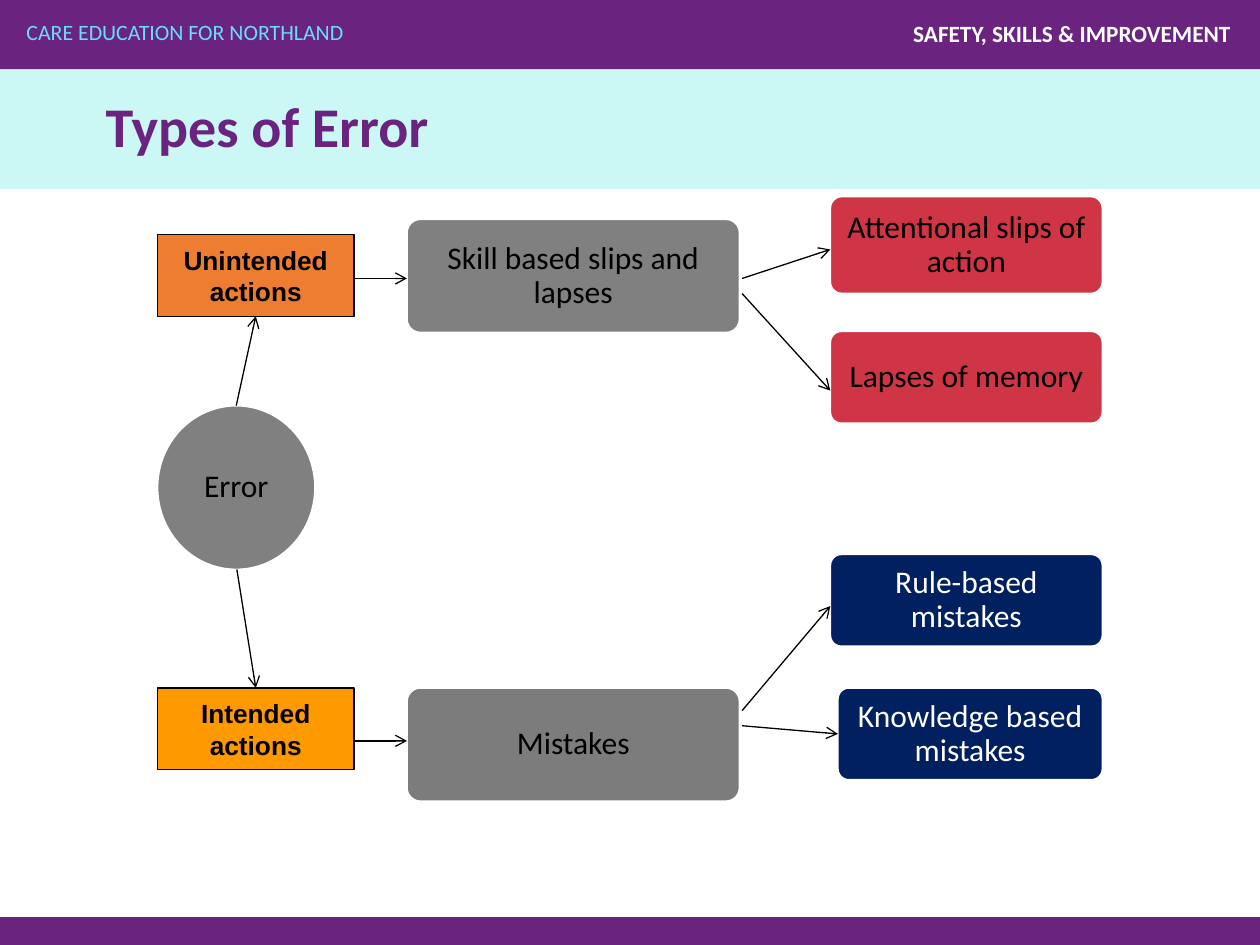
from dataclasses import dataclass

from lxml.etree import SubElement
from pptx import Presentation
from pptx.dml.color import RGBColor
from pptx.enum.shapes import MSO_CONNECTOR, MSO_SHAPE
from pptx.enum.text import MSO_ANCHOR, PP_ALIGN
from pptx.oxml.ns import qn
from pptx.util import Inches, Pt


@dataclass(frozen=True)
class Theme:
    purple: str = "6A2480"
    mint: str = "CBF7F4"
    sky: str = "66DCFF"
    gray: str = "808080"
    slate: str = "7C7C7C"
    red: str = "CF3544"
    navy: str = "002060"
    orange: str = "ED7D31"
    amber: str = "FF9900"
    black: str = "000000"
    white: str = "FFFFFF"
    body: str = "Calibri"
    label: str = "Arial"
    title: float = 32
    node: float = 18
    tag: float = 15
    brand: float = 12.5
    topic: float = 13.3


T = Theme()


def color(code):
    return RGBColor.from_string(code)


def write(shape, lines, size, ink, font=T.body, bold=False,
          align=PP_ALIGN.LEFT, space=None, inset=None, wrap=True,
          anchor=MSO_ANCHOR.MIDDLE):
    frame = shape.text_frame
    frame.word_wrap = wrap
    frame.vertical_anchor = anchor
    if inset is not None:
        frame.margin_left = frame.margin_right = Inches(inset)
        frame.margin_top = frame.margin_bottom = Inches(inset)
    for i, line in enumerate(lines):
        para = frame.add_paragraph() if i else frame.paragraphs[0]
        para.alignment = align
        if space:
            para.line_spacing = space
        run = para.add_run()
        run.text = line
        run.font.size = Pt(size)
        run.font.name = font
        run.font.bold = bold
        run.font.color.rgb = color(ink)


def draw(slide, kind, box, fill, line=None, width=1):
    shape = slide.shapes.add_shape(kind, *map(Inches, box))
    shape.shadow.inherit = False
    shape.fill.solid()
    shape.fill.fore_color.rgb = color(fill)
    if line:
        shape.line.color.rgb = color(line)
        shape.line.width = Pt(width)
    else:
        shape.line.fill.background()
    return shape


def band(slide, top, height, fill):
    draw(slide, MSO_SHAPE.RECTANGLE, (0, top, 10, height), fill)


def words(slide, box, text, size, ink, **style):
    shape = slide.shapes.add_textbox(*map(Inches, box))
    write(shape, [text], size, ink, **style)


def node(slide, box, text, fill, ink=T.black, kind=MSO_SHAPE.ROUNDED_RECTANGLE):
    shape = draw(slide, kind, box, fill, T.white)
    if kind == MSO_SHAPE.ROUNDED_RECTANGLE:
        shape.adjustments[0] = 0.12
    write(shape, [text], T.node, ink, align=PP_ALIGN.CENTER,
          space=0.9, inset=0.04)
    return shape


def tag(slide, top, lines, fill):
    shape = draw(slide, MSO_SHAPE.RECTANGLE, (1.25, top, 1.56, 0.65),
                 fill, T.black, 0.75)
    write(shape, lines, T.tag, T.black, font=T.label, bold=True,
          align=PP_ALIGN.CENTER, wrap=False)
    return shape


def arrow(slide, start, end, source=None, target=None):
    link = slide.shapes.add_connector(
        MSO_CONNECTOR.STRAIGHT, *map(Inches, (*start, *end)))
    link.line.color.rgb = color(T.black)
    link.line.width = Pt(0.75)
    if source:
        link.begin_connect(*source)
    if target:
        link.end_connect(*target)
    # Open arrowhead, no shadow
    SubElement(link.line._get_or_add_ln(), qn("a:tailEnd"), type="arrow")
    SubElement(link._element.spPr, qn("a:effectLst"))


def header(slide):
    band(slide, -0.02, 1.52, T.mint)
    band(slide, -0.02, 0.57, T.purple)
    band(slide, 7.28, 0.23, T.purple)
    words(slide, (0.21, 0.15, 4.1, 0.21), "CARE EDUCATION FOR NORTHLAND",
          T.brand, T.sky, inset=0, anchor=MSO_ANCHOR.TOP)
    words(slide, (5.29, 0.15, 4.48, 0.22), "SAFETY, SKILLS & IMPROVEMENT",
          T.topic, T.white, bold=True, align=PP_ALIGN.RIGHT, inset=0,
          anchor=MSO_ANCHOR.TOP)
    words(slide, (0.74, 0.56, 5.69, 0.94), "Types of Error",
          T.title, T.purple, bold=True, space=0.9)


def diagram(slide):
    # Root and middle column
    error = node(slide, (1.25, 3.22, 1.25, 1.3), "Error", T.gray,
                 kind=MSO_SHAPE.OVAL)
    mid, wide, tall = 3.23, 2.64, 0.9
    node(slide, (mid, 1.74, wide, tall), "Skill based slips and lapses", T.gray)
    node(slide, (mid, 5.46, wide, tall), "Mistakes", T.slate)

    # Right column
    left, right = 6.59, 8.75
    leaf = right - left
    node(slide, (left, 1.56, leaf, 0.77), "Attentional slips of action", T.red)
    node(slide, (left, 2.63, leaf, 0.73), "Lapses of memory", T.red)
    node(slide, (left, 4.4, leaf, 0.73), "Rule-based mistakes", T.navy, T.white)
    know = node(slide, (6.65, 5.46, 2.1, 0.73), "Knowledge based mistakes",
                T.navy, T.white)

    # Action labels
    slip = tag(slide, 1.86, ["Unintended", "actions"], T.orange)
    plan = tag(slide, 5.46, ["Intended", "actions"], T.amber)

    # Arrows from the root
    arrow(slide, (1.88, 3.22), (2.03, 2.51), (error, 0), (slip, 2))
    arrow(slide, (1.88, 4.52), (2.03, 5.46), target=(plan, 0))

    # Arrows to the middle column
    for y in (2.21, 5.88):
        arrow(slide, (2.81, y), (mid, y))

    # Arrows to the right column
    fork = 5.89
    for y, end in ((2.21, 1.98), (2.33, 3.1), (5.64, 4.81)):
        arrow(slide, (fork, y), (left, end))
    arrow(slide, (fork, 5.76), (6.65, 5.82), target=(know, 1))


def main():
    deck = Presentation()
    deck.slide_width, deck.slide_height = Inches(10), Inches(7.5)
    slide = deck.slides.add_slide(deck.slide_layouts[6])
    header(slide)
    diagram(slide)
    deck.save("out.pptx")


if __name__ == "__main__":
    main()
